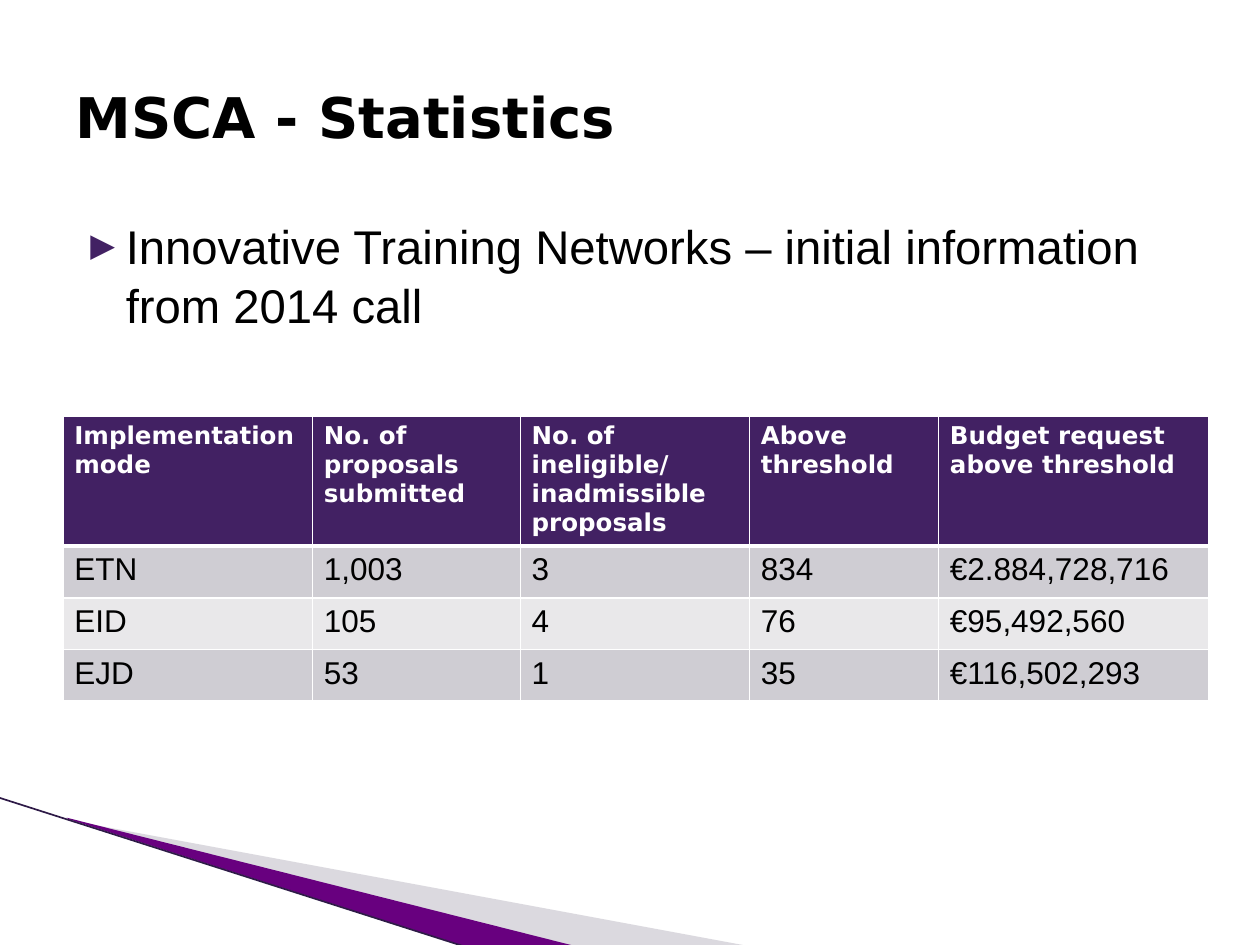
"""Build the MSCA statistics slide with its call results table."""
from lxml.etree import SubElement
from pptx import Presentation
from pptx.dml.color import RGBColor
from pptx.enum.shapes import MSO_CONNECTOR
from pptx.enum.text import MSO_ANCHOR, MSO_AUTO_SIZE, PP_ALIGN
from pptx.oxml import parse_xml
from pptx.oxml.ns import nsdecls, qn
from pptx.util import Inches, Pt

COLORS = {
    "text": "000000", "white": "FFFFFF", "header": "422163", "odd": "CFCDD3",
    "even": "E9E8EA", "grey": "A7A2B1", "violet": "68007F", "edge": "2E1A47",
}


def add_text(paragraph, text, size, font, color="text", bold=False):
    run = paragraph.add_run()
    run.text = text
    run.font.size = Pt(size)
    run.font.name = font
    run.font.bold = bold
    run.font.color.rgb = RGBColor.from_string(COLORS[color])


def add_border(cell, side, width):
    cell._tc.get_or_add_tcPr().append(parse_xml(
        f'<a:{side} {nsdecls("a")} w="{Pt(width)}"><a:solidFill>'
        f'<a:srgbClr val="{COLORS["white"]}"/></a:solidFill></a:{side}>'))


prs = Presentation()
prs.slide_width, prs.slide_height = Inches(10), Inches(7.5)
slide = prs.slides.add_slide(prs.slide_layouts[5])
shapes = slide.shapes

wedges = [
    ("grey", [(0.55, 6.51), (5.95, 7.51), (4.56, 7.51), (0.55, 6.5)]),
    ("violet", [(0.53, 6.49), (4.57, 7.51), (3.72, 7.52), (0.54, 6.5)]),
]
for color, corners in wedges:
    points = [(Inches(x), Inches(y)) for x, y in corners]
    outline = shapes.build_freeform(*points[0])
    outline.add_line_segments(points[1:], close=True)
    wedge = outline.convert_to_shape()
    wedge.shadow.inherit = False
    wedge.line.fill.background()
    wedge.fill.solid()
    wedge.fill.fore_color.rgb = RGBColor.from_string(COLORS[color])
    if color == "grey":
        tint = wedge._element.spPr.find(qn("a:solidFill"))[0]
        SubElement(tint, qn("a:alpha"), val="40000")

edge = shapes.add_connector(
    MSO_CONNECTOR.STRAIGHT, Inches(-0.01), Inches(6.33), Inches(3.71), Inches(7.52))
edge.line.color.rgb = RGBColor.from_string(COLORS["edge"])
edge.line.width = Pt(0.95)
SubElement(edge._element.spPr, qn("a:effectLst"))

title = shapes.title
title.left, title.top = Inches(0.5), Inches(0.3)
title.width, title.height = Inches(7.89), Inches(1.25)
title.text_frame.auto_size = MSO_AUTO_SIZE.NONE
title.text_frame.vertical_anchor = MSO_ANCHOR.MIDDLE
heading = title.text_frame.paragraphs[0]
heading.alignment = PP_ALIGN.LEFT
add_text(heading, "MSCA - Statistics", 32, "DejaVu Sans", bold=True)

intro = shapes.add_textbox(Inches(0.5), Inches(1.65), Inches(9), Inches(1.2))
intro.text_frame.word_wrap = True
topic = intro.text_frame.paragraphs[0]
topic.line_spacing = 1.05
bullet = topic._p.get_or_add_pPr()
bullet.set("marL", str(Inches(0.4)))
bullet.set("indent", str(Inches(-0.28)))
SubElement(SubElement(bullet, qn("a:buClr")), qn("a:srgbClr"), val=COLORS["header"])
SubElement(bullet, qn("a:buSzPct"), val="68000")
SubElement(bullet, qn("a:buFont"), typeface="DejaVu Sans")
SubElement(bullet, qn("a:buChar"), char="▶")
add_text(topic, "Innovative Training Networks – initial information from 2014 call", 27, "Arial")

rows = [
    ["Implementation mode", "No. of proposals submitted",
     "No. of ineligible/\ninadmissible proposals", "Above threshold",
     "Budget request above threshold"],
    ["ETN", "1,003", "3", "834", "€2.884,728,716"],
    ["EID", "105", "4", "76", "€95,492,560"],
    ["EJD", "53", "1", "35", "€116,502,293"],
]
column_widths = [1.98, 1.65, 1.82, 1.5, 2.14]
row_heights = [1, 0.41, 0.41, 0.41]
statistics = shapes.add_table(
    len(rows), len(column_widths), Inches(0.5), Inches(3.3),
    Inches(sum(column_widths)), Inches(sum(row_heights))).table
for column, width in zip(statistics.columns, column_widths):
    column.width = Inches(width)
for row, height in zip(statistics.rows, row_heights):
    row.height = Inches(height)

for r, values in enumerate(rows):
    is_header = r == 0
    fill = "header" if is_header else "odd" if r % 2 else "even"
    style = (14, "DejaVu Sans", "white", True) if is_header else (18, "Arial")
    for c, value in enumerate(values):
        cell = statistics.cell(r, c)
        cell.margin_left = cell.margin_right = Inches(0.09)
        cell.margin_top = cell.margin_bottom = Inches(0.05)
        for side in ("lnL", "lnR", "lnT", "lnB"):
            thick = (is_header and side == "lnB") or (r == 1 and side == "lnT")
            add_border(cell, side, 3 if thick else 1)
        cell.fill.solid()
        cell.fill.fore_color.rgb = RGBColor.from_string(COLORS[fill])
        for i, line in enumerate(value.split("\n")):
            frame = cell.text_frame
            paragraph = frame.add_paragraph() if i else frame.paragraphs[0]
            add_text(paragraph, line, *style)

prs.save("out.pptx")
